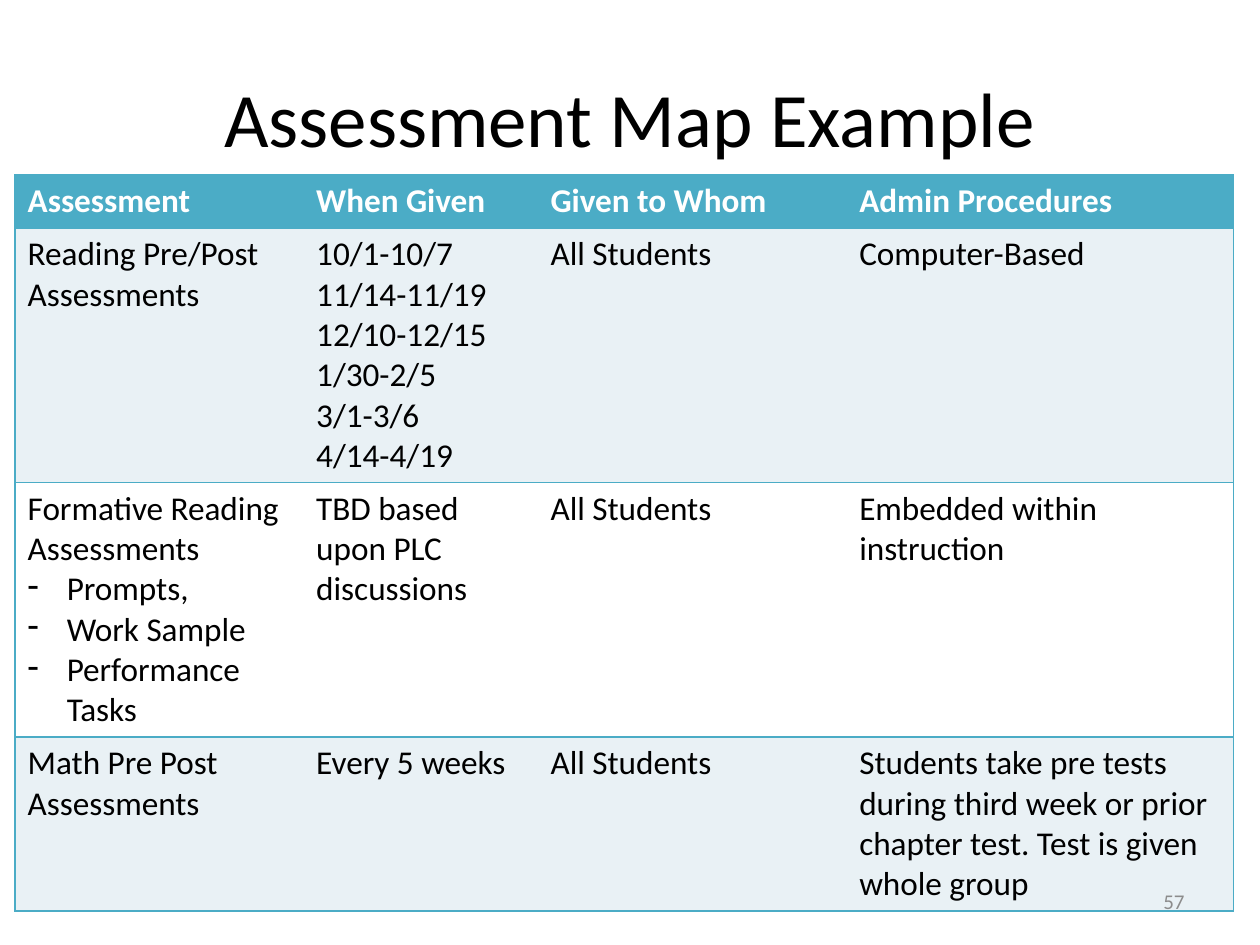
"""Builds the assessment map slide: a title, a four-column table and a page number."""
from dataclasses import dataclass

from lxml.etree import SubElement
from pptx import Presentation
from pptx.dml.color import RGBColor
from pptx.enum.text import MSO_ANCHOR, PP_ALIGN
from pptx.oxml.ns import qn
from pptx.util import Inches, Pt


@dataclass(frozen=True)
class Theme:
    font: str = "Calibri"
    title_size: float = 44
    table_size: float = 19
    number_size: float = 12
    ink: str = "000000"
    accent: str = "4BACC6"
    band: str = "E9F1F5"
    paper: str = "FFFFFF"
    muted: str = "8C8C8C"


def style_text(paragraph, size, color, bold=False):
    for run in paragraph.runs:
        run.font.name = theme.font
        run.font.size = Pt(size)
        run.font.bold = bold
        run.font.color.rgb = RGBColor.from_string(color)


def add_label(text, left, top, width, height, align, size, color):
    frame = slide.shapes.add_textbox(*map(Inches, (left, top, width, height))).text_frame
    frame.word_wrap = True
    frame.vertical_anchor = MSO_ANCHOR.MIDDLE
    frame.text = text
    frame.paragraphs[0].alignment = align
    style_text(frame.paragraphs[0], size, color)


theme = Theme()
deck = Presentation()
deck.slide_width, deck.slide_height = Inches(10), Inches(7.5)
slide = deck.slides.add_slide(deck.slide_layouts[6])

add_label("Assessment Map Example", 0.5, 0.3, 9, 1.25,
          PP_ALIGN.CENTER, theme.title_size, theme.ink)

assessment_map = [
    ["Assessment", "When Given", "Given to Whom", "Admin Procedures"],
    ["Reading Pre/Post Assessments",
     "10/1-10/7\n11/14-11/19\n12/10-12/15\n1/30-2/5\n3/1-3/6\n4/14-4/19",
     "All Students", "Computer-Based"],
    ["Formative Reading Assessments\n- Prompts,\n- Work Sample\n- Performance Tasks",
     "TBD based upon PLC discussions", "All Students", "Embedded within instruction"],
    ["Math Pre Post Assessments", "Every 5 weeks", "All Students",
     "Students take pre tests during third week or prior chapter test. "
     "Test is given whole group"],
]
column_widths = [2.29, 1.86, 2.45, 3.07]
row_heights = [0.42, 2.02, 2.02, 1.38]
row_fills = [theme.accent, theme.band, theme.paper, theme.band]
last_column = len(column_widths) - 1
bullet_indent = Inches(0.31)

grid = slide.shapes.add_table(
    len(row_heights), len(column_widths), Inches(0.12), Inches(1.39),
    Inches(sum(column_widths)), Inches(sum(row_heights))).table
for column, width in zip(grid.columns, column_widths):
    column.width = Inches(width)
for row, height in zip(grid.rows, row_heights):
    row.height = Inches(height)

for r, entries in enumerate(assessment_map):
    for c, entry in enumerate(entries):
        cell = grid.cell(r, c)
        cell.fill.solid()
        cell.fill.fore_color.rgb = RGBColor.from_string(row_fills[r])

        lines = entry.split("\n")
        cell.text_frame.text = "\n".join(line.removeprefix("- ") for line in lines)
        for line, paragraph in zip(lines, cell.text_frame.paragraphs):
            style_text(paragraph, theme.table_size,
                       theme.paper if r == 0 else theme.ink, bold=r == 0)
            if line.startswith("- "):
                properties = paragraph._p.get_or_add_pPr()
                properties.set("marL", str(bullet_indent))
                properties.set("indent", str(-bullet_indent))
                SubElement(properties, qn("a:buChar")).set("char", "-")

        sides = {"a:lnL": c == 0, "a:lnR": c == last_column, "a:lnT": True, "a:lnB": True}
        cell_properties = cell._tc.get_or_add_tcPr()
        for position, (side, visible) in enumerate(sides.items()):
            border = SubElement(cell_properties, qn(side))
            cell_properties.insert(position, border)
            if visible:
                border.set("w", str(Pt(1)))
                paint = SubElement(border, qn("a:solidFill"))
                SubElement(paint, qn("a:srgbClr")).set("val", theme.accent)
            else:
                SubElement(border, qn("a:noFill"))

add_label("57", 7.17, 6.95, 2.33, 0.4, PP_ALIGN.RIGHT, theme.number_size, theme.muted)

deck.save("out.pptx")
